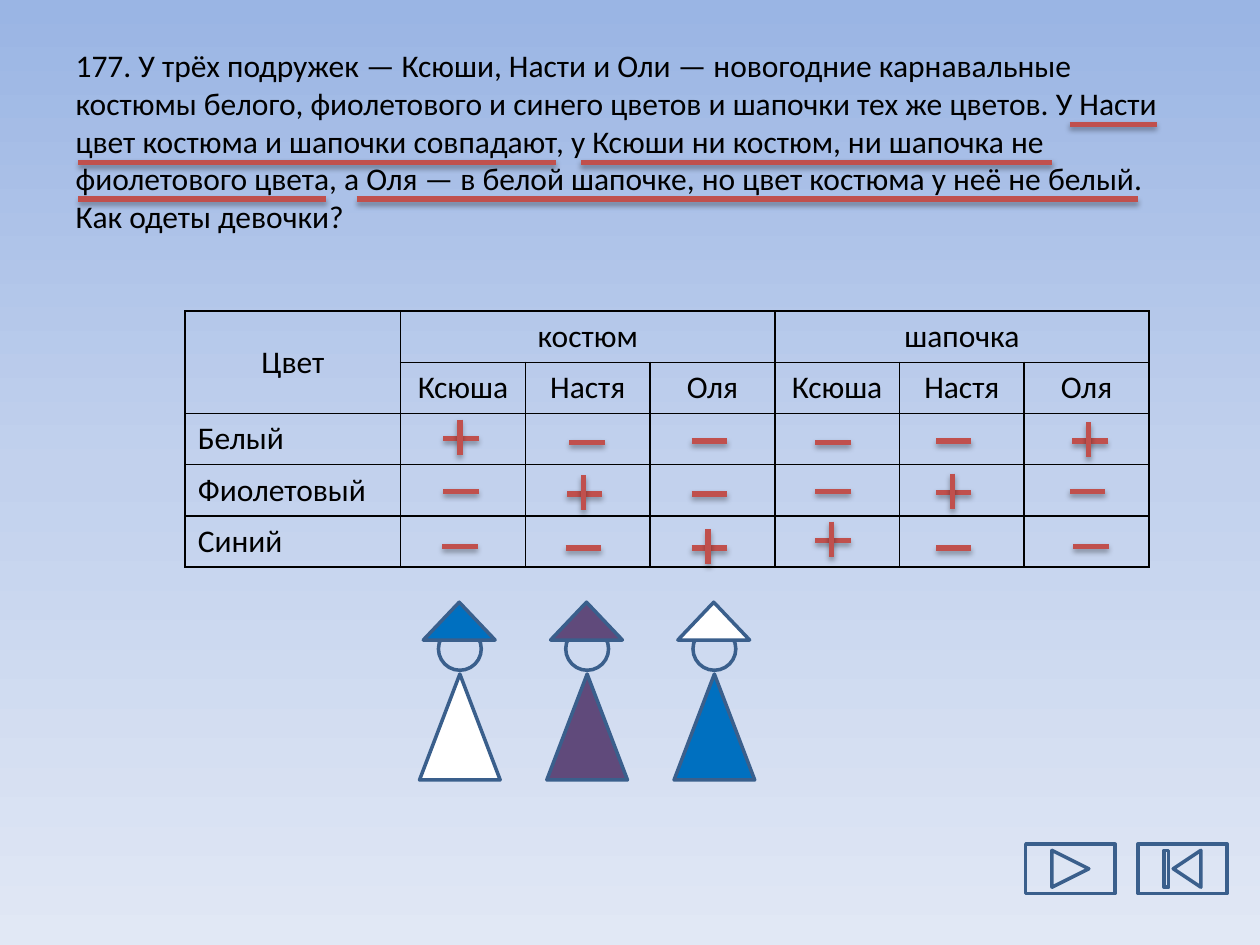
from lxml.etree import SubElement
from pptx import Presentation
from pptx.dml.color import RGBColor
from pptx.enum.shapes import MSO_CONNECTOR, MSO_SHAPE
from pptx.enum.text import MSO_ANCHOR, MSO_AUTO_SIZE, PP_ALIGN
from pptx.oxml import parse_xml
from pptx.oxml.ns import nsdecls, qn
from pptx.util import Inches, Pt

BLACK, WHITE, RED, OUTLINE = "000000", "FFFFFF", "C0504D", "3A5F8C"
BLUE, VIOLET = "0070C0", "604A7B"
TASK = (
    "177. У трёх подружек — Ксюши, Насти и Оли — новогодние карнавальные "
    "костюмы белого, фиолетового и синего цветов и шапочки тех же цветов. "
    "У Насти цвет костюма и шапочки совпадают, у Ксюши ни костюм, ни шапочка "
    "не фиолетового цвета, а Оля — в белой шапочке, но цвет костюма у неё "
    "не белый. Как одеты девочки?"
)
GIRLS = ["Ксюша", "Настя", "Оля"]
ROWS = [
    ["Цвет", "костюм", "", "", "шапочка", "", ""],
    ["", *GIRLS, *GIRLS],
    ["Белый"],
    ["Фиолетовый"],
    ["Синий"],
]
UNDERLINES = [
    (8.49, 9.18, 0.99),
    (0.62, 4.41, 1.29),
    (4.61, 8.35, 1.29),
    (0.62, 2.59, 1.58),
    (2.83, 9.03, 1.58),
]
MARK_ROWS = [
    ("+----+", [3.66, 4.66, 5.63, 6.61, 7.57, 8.65], [3.48, 3.51, 3.5, 3.51, 3.5, 3.5]),
    ("-+--+-", [3.66, 4.64, 5.63, 6.61, 7.57, 8.63], [3.9, 3.92, 3.92, 3.9, 3.91, 3.9]),
    ("--++--", [3.65, 4.63, 5.63, 6.61, 7.57, 8.66], [4.34, 4.35, 4.35, 4.29, 4.35, 4.34]),
]
OUTFITS = [(BLUE, WHITE), (VIOLET, VIOLET), (WHITE, BLUE)]


def color(value):
    return RGBColor.from_string(value)


def set_background(page):
    stops = "".join(
        f'<a:gs pos="{position}"><a:srgbClr val="{value}"/></a:gs>'
        for position, value in [(0, "9AB5E4"), (50000, "C2D1ED"), (100000, "E1E8F5")]
    )
    background = parse_xml(
        f'<p:bg {nsdecls("p", "a")}><p:bgPr><a:gradFill rotWithShape="1">'
        f'<a:gsLst>{stops}</a:gsLst><a:lin ang="5400000" scaled="0"/>'
        "</a:gradFill><a:effectLst/></p:bgPr></p:bg>"
    )
    page.element.cSld.insert(0, background)


def write(frame, text, align):
    para = frame.paragraphs[0]
    para.alignment = align
    span = para.add_run()
    span.text = text
    span.font.size = Pt(18)
    span.font.name = "Calibri"
    span.font.bold = False
    span.font.color.rgb = color(BLACK)


def add_title(page):
    box = page.shapes.title
    box.left, box.top, box.width, box.height = map(Inches, (0.5, 0.3, 9, 1.63))
    frame = box.text_frame
    frame.word_wrap = True
    frame.auto_size = MSO_AUTO_SIZE.NONE
    frame.vertical_anchor = MSO_ANCHOR.MIDDLE
    write(frame, TASK, PP_ALIGN.LEFT)


def set_border(cell, side, width):
    line = SubElement(cell._tc.get_or_add_tcPr(), qn(f"a:{side}"), w=str(Pt(width)))
    fill = SubElement(line, qn("a:solidFill"))
    SubElement(fill, qn("a:srgbClr"), val=BLACK)


def format_cell(cell, column):
    cell.vertical_anchor = MSO_ANCHOR.MIDDLE
    set_border(cell, "lnL", 1.5 if column == 4 else 1)
    set_border(cell, "lnR", 1.5 if column == 3 else 1)
    set_border(cell, "lnT", 1)
    set_border(cell, "lnB", 1)
    cell.fill.background()


def add_color_table(page):
    table = page.shapes.add_table(
        5, 7, Inches(1.47), Inches(2.47), Inches(7.66), Inches(2.03)
    ).table
    table.first_row = table.horz_banding = False
    for index, column in enumerate(table.columns):
        column.width = Inches(0.99 if index else 1.71)
    for row_index, row in enumerate(table.rows):
        for column_index, cell in enumerate(row.cells):
            format_cell(cell, column_index)
        for cell, text in zip(row.cells, ROWS[row_index]):
            if text:
                align = PP_ALIGN.CENTER if row_index < 2 else PP_ALIGN.LEFT
                write(cell.text_frame, text, align)
    table.cell(0, 0).merge(table.cell(1, 0))
    table.cell(0, 1).merge(table.cell(0, 3))
    table.cell(0, 4).merge(table.cell(0, 6))


def add_red_line(page, *ends):
    line = page.shapes.add_connector(MSO_CONNECTOR.STRAIGHT, *map(Inches, ends))
    line.line.color.rgb = color(RED)
    line.line.width = Pt(3)
    effects = SubElement(line.element.spPr, qn("a:effectLst"))
    shadow = SubElement(
        effects, qn("a:outerShdw"), blurRad=str(Pt(3.1)), dist=str(Pt(1.8)),
        dir="5400000", rotWithShape="0",
    )
    tint = SubElement(shadow, qn("a:srgbClr"), val=BLACK)
    SubElement(tint, qn("a:alpha"), val="35000")


def add_mark(page, sign, x, y):
    add_red_line(page, x - 0.14, y, x + 0.14, y)
    if sign == "+":
        add_red_line(page, x - 0.01, y - 0.15, x - 0.01, y + 0.13)


def add_outlined(page, kind, left, top, width, height, fill=None):
    shape = page.shapes.add_shape(kind, *map(Inches, (left, top, width, height)))
    shape.shadow.inherit = False
    shape.line.color.rgb = color(OUTLINE)
    shape.line.width = Pt(2)
    if fill:
        shape.fill.solid()
        shape.fill.fore_color.rgb = color(fill)
    else:
        shape.fill.background()


def add_girl(page, center, hat, dress):
    triangle = MSO_SHAPE.ISOSCELES_TRIANGLE
    add_outlined(page, MSO_SHAPE.OVAL, center - 0.17, 4.98, 0.34, 0.34)
    add_outlined(page, triangle, center - 0.32, 5.35, 0.64, 0.84, dress)
    add_outlined(page, triangle, center - 0.29, 4.78, 0.57, 0.3, hat)


def main():
    deck = Presentation()
    deck.slide_width, deck.slide_height = Inches(10), Inches(7.5)
    page = deck.slides.add_slide(deck.slide_layouts[5])
    set_background(page)
    add_title(page)
    add_outlined(page, MSO_SHAPE.ACTION_BUTTON_BEGINNING, 9.03, 6.7, 0.71, 0.39)
    add_outlined(page, MSO_SHAPE.ACTION_BUTTON_FORWARD_OR_NEXT, 8.14, 6.7, 0.71, 0.39)
    add_color_table(page)
    for start, end, y in UNDERLINES:
        add_red_line(page, start, y, end, y)
    for row in MARK_ROWS:
        for sign, x, y in zip(*row):
            add_mark(page, sign, x, y)
    for index, (hat, dress) in enumerate(OUTFITS):
        add_girl(page, 3.65 + 1.01 * index, hat, dress)
    deck.save("out.pptx")


if __name__ == "__main__":
    main()
